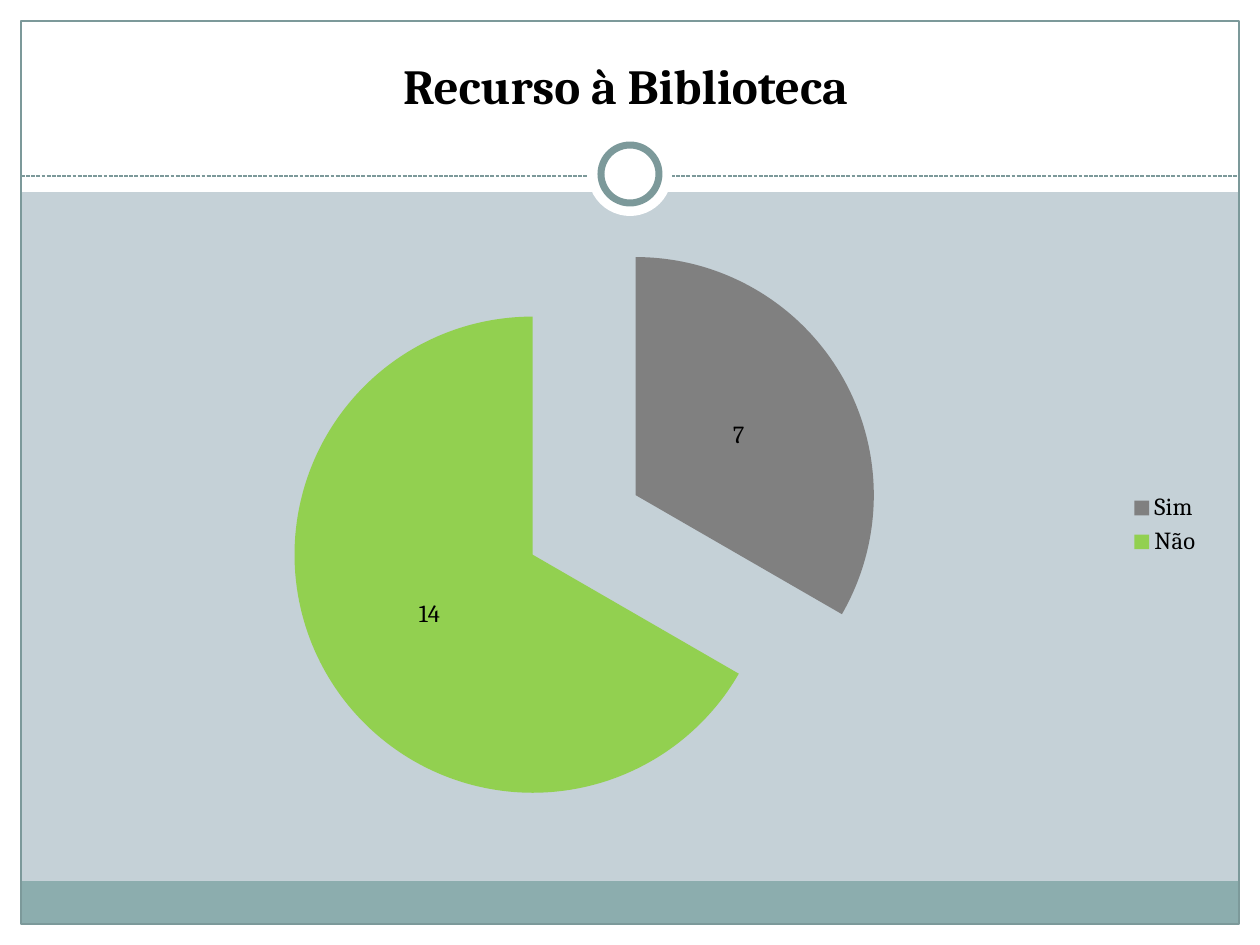
"""Builds the library-use slide: a framed page with a title and an exploded pie."""
from dataclasses import dataclass

from lxml.etree import SubElement
from pptx import Presentation
from pptx.chart.data import CategoryChartData
from pptx.dml.color import RGBColor
from pptx.enum.chart import XL_CHART_TYPE, XL_LABEL_POSITION as LabelAt, XL_LEGEND_POSITION as LegendAt
from pptx.enum.dml import MSO_LINE_DASH_STYLE as Dash
from pptx.enum.shapes import MSO_CONNECTOR, MSO_SHAPE as Shape
from pptx.enum.text import MSO_AUTO_SIZE as AutoSize, PP_ALIGN as Align
from pptx.oxml import parse_xml
from pptx.oxml.ns import nsdecls, qn
from pptx.util import Pt

EMU_PER_PX = 914400 / 126
WIDTH, HEIGHT = 1260, 945


@dataclass(frozen=True)
class Theme:
    font: str = "Cambria"
    background: str = "C5D1D7"
    paper: str = "FFFFFF"
    band: str = "8CADAE"
    frame: str = "7C999A"
    ink: str = "000000"
    yes: str = "808080"
    no: str = "92D050"
    title_pt: int = 28
    chart_pt: int = 14
    hairline_pt: float = 0.75
    ring_pt: int = 4


def emu(*lengths):
    return [round(length * EMU_PER_PX) for length in lengths]


def rgb(colour):
    return RGBColor.from_string(colour)


def set_font(font, theme, size, bold=False):
    font.name, font.size, font.bold = theme.font, Pt(size), bold
    font.color.rgb = rgb(theme.ink)


def write(frame, text, *, theme, size, bold=False, align=Align.LEFT):
    paragraph = frame.paragraphs[0]
    paragraph.alignment = align
    run = paragraph.add_run()
    run.text = text
    set_font(run.font, theme, size, bold)


class SlideBuilder:
    def __init__(self, slide, theme):
        self.slide, self.theme = slide, theme
        fill = slide.background.fill
        fill.solid()
        fill.fore_color.rgb = rgb(theme.background)

    def shape(self, kind, *box, fill=None, line=None, weight=0.75):
        shape = self.slide.shapes.add_shape(kind, *emu(*box))
        shape.shadow.inherit = False
        if fill:
            shape.fill.solid()
            shape.fill.fore_color.rgb = rgb(fill)
        else:
            shape.fill.background()
        if line:
            shape.line.color.rgb = rgb(line)
            shape.line.width = Pt(weight)
        else:
            shape.line.fill.background()

    def dashed_rule(self, *ends):
        rule = self.slide.shapes.add_connector(MSO_CONNECTOR.STRAIGHT, *emu(*ends))
        rule.line.color.rgb = rgb(self.theme.frame)
        rule.line.width = Pt(self.theme.hairline_pt)
        rule.line.dash_style = Dash.SQUARE_DOT
        SubElement(rule._element.spPr, qn("a:effectLst"))

    def title(self, text, *box):
        frame = self.slide.shapes.add_textbox(*emu(*box)).text_frame
        frame.word_wrap = True
        frame.auto_size = AutoSize.SHAPE_TO_FIT_TEXT
        write(frame, text, theme=self.theme, size=self.theme.title_pt, bold=True, align=Align.CENTER)

    def exploded_pie(self, answers, colours, *box, explosion):
        counts = CategoryChartData()
        counts.categories = list(answers)
        counts.add_series("Series 1", list(answers.values()))
        chart = self.slide.shapes.add_chart(XL_CHART_TYPE.PIE, *emu(*box), counts).chart
        chart.has_title = False
        set_font(chart.font, self.theme, self.theme.chart_pt)
        chart.has_legend = True
        chart.legend.position = LegendAt.RIGHT
        chart.legend.include_in_layout = False
        set_font(chart.legend.font, self.theme, self.theme.chart_pt)
        pie = chart.plots[0]
        pie.vary_by_categories = True
        series = pie.series[0]
        series._element.find(qn("c:tx")).addnext(
            parse_xml(f'<c:explosion {nsdecls("c")} val="{explosion}"/>'))
        for index, colour in enumerate(colours):
            fill = series.points[index].format.fill
            fill.solid()
            fill.fore_color.rgb = rgb(colour)
        labels = series.data_labels
        labels.show_value = True
        labels.position = LabelAt.CENTER
        set_font(labels.font, self.theme, self.theme.chart_pt)


def main():
    theme = Theme()
    deck = Presentation()
    deck.slide_width, deck.slide_height = emu(WIDTH, HEIGHT)
    page = SlideBuilder(deck.slides.add_slide(deck.slide_layouts[6]), theme)

    margin, header, rule_y = 21, 192, 176
    inner_width, inner_height = WIDTH - 2 * margin, HEIGHT - 2 * margin
    for edge in (
        (0, HEIGHT - margin, WIDTH, margin),
        (0, 0, WIDTH, header),
        (0, 0, margin, HEIGHT),
        (WIDTH - margin, 0, margin, HEIGHT),
    ):
        page.shape(Shape.RECTANGLE, *edge, fill=theme.paper)
    page.shape(Shape.RECTANGLE, margin, 881, inner_width, 43, fill=theme.band)
    page.shape(Shape.RECTANGLE, margin, margin, inner_width, inner_height,
               line=theme.frame, weight=theme.hairline_pt)
    page.dashed_rule(margin, rule_y, WIDTH - margin, rule_y)

    centre_x, centre_y = WIDTH // 2, 174
    for radius, outline in ((42, None), (29, theme.frame)):
        page.shape(Shape.OVAL, centre_x - radius, centre_y - radius, 2 * radius, 2 * radius,
                   fill=theme.paper, line=outline, weight=theme.ring_pt)

    page.exploded_pie({"Sim": 7, "Não": 14}, (theme.yes, theme.no), 42, 210, 1172, 630, explosion=25)
    page.title("Recurso à Biblioteca", 286, 49, 679, 72)
    deck.save("out.pptx")


if __name__ == "__main__":
    main()
